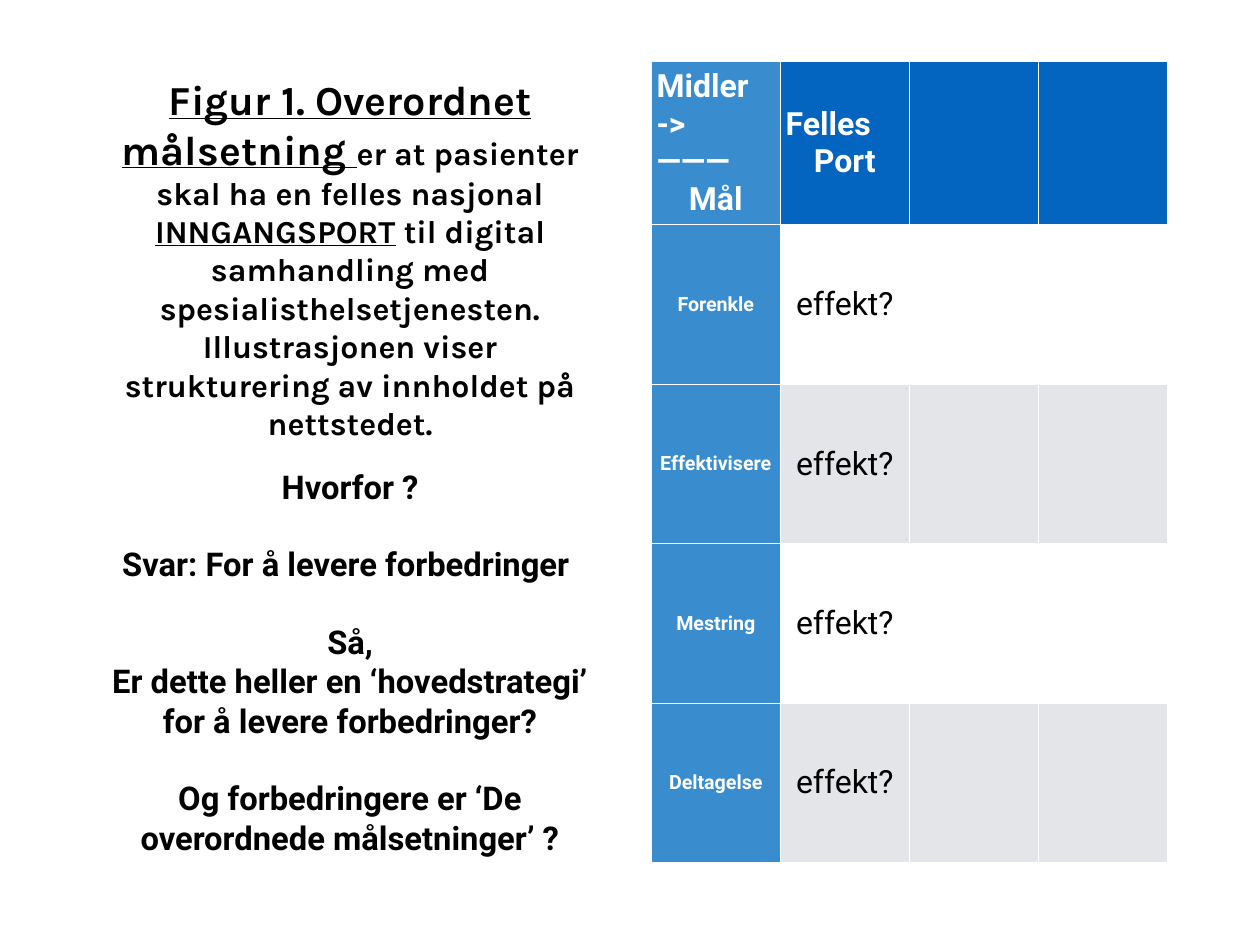
import pptx
import pptx.util
import pptx.dml.color
import pptx.enum.text

Cm = pptx.util.Cm
Pt = pptx.util.Pt
RGBColor = pptx.dml.color.RGBColor
ALIGN = pptx.enum.text.PP_ALIGN
ANCHOR = pptx.enum.text.MSO_ANCHOR

BLACK = RGBColor(0x00, 0x00, 0x00)
WHITE = RGBColor(0xFF, 0xFF, 0xFF)
DARK_BLUE = RGBColor(0x03, 0x65, 0xC0)
BLUE = RGBColor(0x39, 0x8C, 0xCE)
GREY = RGBColor(0xE3, 0xE5, 0xE8)
INSET = Cm(0.15)

INTRO = [
    ("Figur 1. Overordnet målsetning ", 33.5, True),
    ("er at pasienter skal ha en felles nasjonal ", 26, False),
    ("INNGANGSPORT", 26, True),
    (" til digital samhandling med spesialisthelsetjenesten. "
     "Illustrasjonen viser strukturering av innholdet på nettstedet.", 26, False),
]
QUESTIONS = [
    ("Hvorfor ?", 0),
    ("Svar: For å levere forbedringer ", 31.2),
    ("Så,", 31.2),
    ("Er dette heller en ‘hovedstrategi’ for å levere forbedringer?", 0),
    ("Og forbedringere er ‘De overordnede målsetninger’ ?", 31.2),
]
HEADINGS = [["Midler", "->", "———", "Mål"], ["Felles", "Port"]]
GOALS = ["Forenkle", "Effektivisere", "Mestring", "Deltagelse"]
COLUMNS = 4


def add_run(p, text, size=26, font="Roboto", color=BLACK, bold=True, underline=False):
    r = p.add_run()
    r.text = text
    r.font.size = Pt(size)
    r.font.name = font
    r.font.color.rgb = color
    r.font.bold = bold
    r.font.underline = underline


def add_paragraph(tf, first, align=ALIGN.CENTER, before=0):
    p = tf.paragraphs[0] if first else tf.add_paragraph()
    p.alignment = align
    if before:
        p.space_before = Pt(before)
    return p


def add_text_frame(slide, left, top, width, height, anchor):
    tf = slide.shapes.add_textbox(left, top, width, height).text_frame
    tf.word_wrap = True
    tf.vertical_anchor = anchor
    tf.margin_left = tf.margin_right = tf.margin_top = tf.margin_bottom = INSET
    return tf


def add_intro(slide, left, top, width, height):
    tf = add_text_frame(slide, left, top, width, height, ANCHOR.BOTTOM)
    p = add_paragraph(tf, True)
    for text, size, underline in INTRO:
        add_run(p, text, size=size, font="Karla", underline=underline)


def add_questions(slide, left, top, width, height):
    tf = add_text_frame(slide, left, top, width, height, ANCHOR.TOP)
    for i, (text, before) in enumerate(QUESTIONS):
        add_run(add_paragraph(tf, i == 0, before=before), text, size=26.6)


def fill_cell(cell, color):
    cell.fill.solid()
    cell.fill.fore_color.rgb = color
    cell.vertical_anchor = ANCHOR.MIDDLE
    cell.margin_left = cell.margin_right = cell.margin_top = cell.margin_bottom = INSET


def add_goal_table(slide, left, top, width, height):
    rows = len(GOALS) + 1
    table = slide.shapes.add_table(rows, COLUMNS, left, top, width, height).table
    for row in range(rows):
        for column in range(COLUMNS):
            if column == 0:
                color = BLUE
            elif row == 0:
                color = DARK_BLUE
            else:
                color = WHITE if row % 2 else GREY
            fill_cell(table.cell(row, column), color)

    for column, lines in enumerate(HEADINGS):
        tf = table.cell(0, column).text_frame
        for i, line in enumerate(lines):
            align = ALIGN.CENTER if line == lines[-1] else ALIGN.LEFT
            add_run(add_paragraph(tf, i == 0, align), line, color=WHITE)

    for row, goal in enumerate(GOALS, 1):
        p = add_paragraph(table.cell(row, 0).text_frame, True)
        add_run(p, goal, size=16, color=WHITE)
        p = add_paragraph(table.cell(row, 1).text_frame, True)
        add_run(p, "effekt?", bold=False)


def main():
    prs = pptx.Presentation()
    prs.slide_width = Cm(36.12)
    prs.slide_height = Cm(27.1)
    slide = prs.slides.add_slide(prs.slide_layouts[6])
    add_intro(slide, Cm(2.64), Cm(1.75), Cm(14.8), Cm(11.07))
    add_questions(slide, Cm(2.64), Cm(13.23), Cm(14.8), Cm(11.4))
    add_goal_table(slide, Cm(18.67), Cm(1.75), Cm(14.8), Cm(22.86))
    prs.save("out.pptx")


if __name__ == "__main__":
    main()
